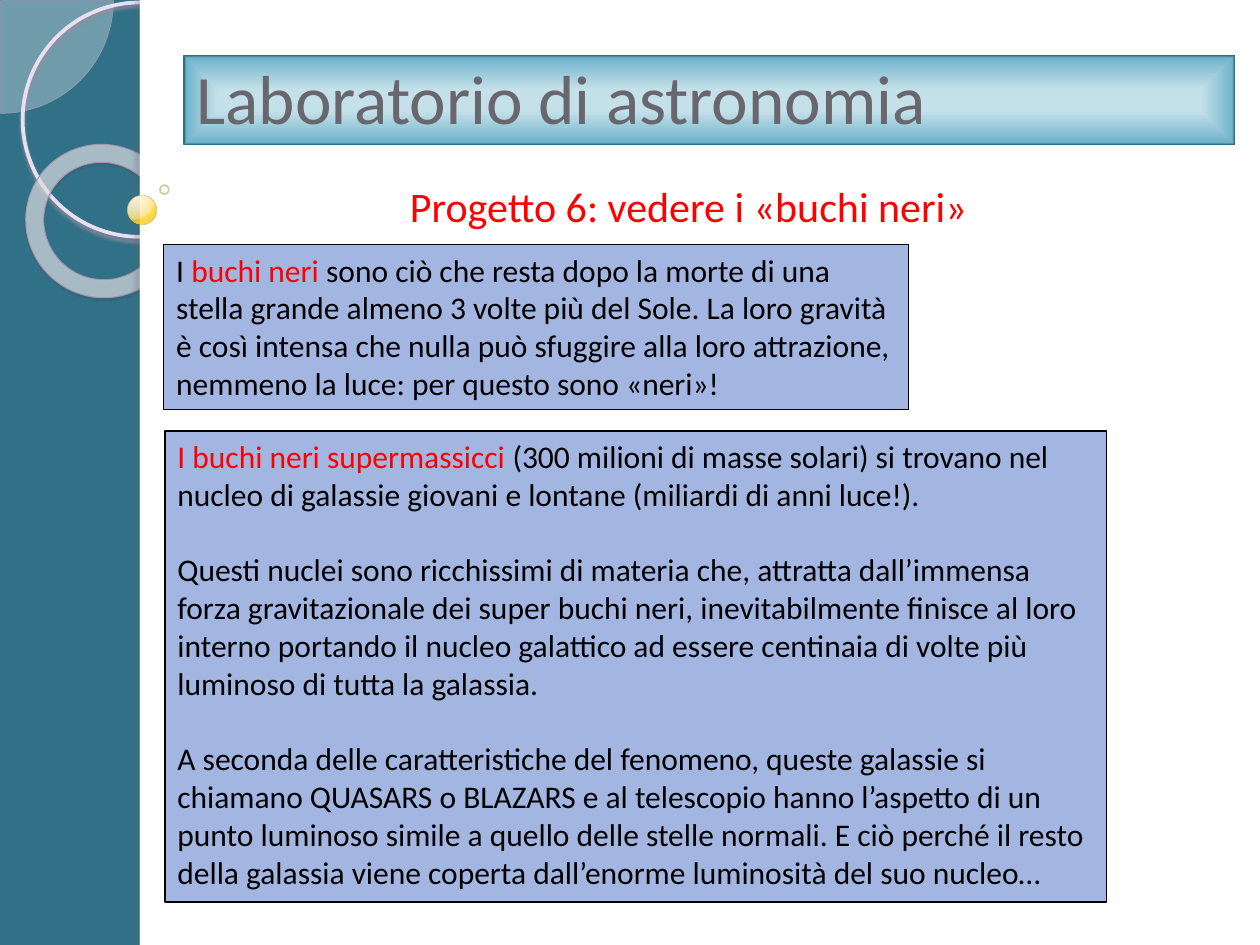
from lxml import etree
from pptx import Presentation
from pptx.dml.color import RGBColor
from pptx.enum.shapes import MSO_SHAPE
from pptx.enum.text import MSO_ANCHOR, MSO_AUTO_SIZE, PP_ALIGN
from pptx.oxml import parse_xml
from pptx.oxml.ns import nsdecls, qn
from pptx.util import Inches, Pt

PIE, OVAL, DONUT, RECT = MSO_SHAPE.PIE, MSO_SHAPE.OVAL, MSO_SHAPE.DONUT, MSO_SHAPE.RECTANGLE
LEFT, CENTER = PP_ALIGN.LEFT, PP_ALIGN.CENTER

THEME = {
    "font": "Calibri", "title_size": Pt(39.6), "subtitle_size": Pt(24), "text_size": Pt(18),
    "title": "69666E", "accent": "FF0000", "text": "000000",
    "backdrop": "317187", "panel": "FFFFFF", "box": "A3B6E2",
    "banner": [(24, "C4E0E9", 100), (94, "72B5CC", 100), (100, "317187", 100)],
    "ball": [(0, "FFF7E2", 95), (50, "FFF0C5", 90), (95, "FFE07C", 88), (100, "FFD327", 85)],
}


def set_gradient(shape, stops, path, focus):
    properties = shape.element.spPr
    for tag in ("a:noFill", "a:solidFill"):
        for old in properties.findall(qn(tag)):
            properties.remove(old)
    marks = "".join(
        f'<a:gs pos="{pos * 1000}"><a:srgbClr val="{color}"><a:alpha val="{alpha * 1000}"/></a:srgbClr></a:gs>'
        for pos, color, alpha in stops)
    left, top, right, bottom = (edge * 1000 for edge in focus)
    gradient = parse_xml(
        f'<a:gradFill {nsdecls("a")} rotWithShape="1"><a:gsLst>{marks}</a:gsLst><a:path path="{path}">'
        f'<a:fillToRect l="{left}" t="{top}" r="{right}" b="{bottom}"/></a:path></a:gradFill>')
    properties.find(qn("a:prstGeom")).addnext(gradient)


def add_ornament(kind, box, fill=None, alpha=100, line=None, shadow=None):
    ornament = slide.shapes.add_shape(kind, *map(Inches, box))
    ornament.shadow.inherit = False
    if fill:
        ornament.fill.solid()
        ornament.fill.fore_color.rgb = RGBColor.from_string(fill)
        color = ornament.element.spPr.find(qn("a:solidFill"))[0]
        etree.SubElement(color, qn("a:alpha"), val=str(alpha * 1000))
    else:
        ornament.fill.background()
    if line:
        ornament.line.color.rgb = RGBColor.from_string(line[0])
        ornament.line.width = Pt(line[1])
    else:
        ornament.line.fill.background()
    if shadow:
        color, opacity, blur, distance, angle = shadow
        ornament.element.spPr.find(qn("a:effectLst")).append(parse_xml(
            f'<a:outerShdw {nsdecls("a")} blurRad="{Pt(blur)}" dist="{Pt(distance)}" dir="{angle * 60000}">'
            f'<a:srgbClr val="{color}"><a:alpha val="{opacity * 1000}"/></a:srgbClr></a:outerShdw>'))
    return ornament


prs = Presentation()
prs.slide_width, prs.slide_height = Inches(10), Inches(7.5)
slide = prs.slides.add_slide(prs.slide_layouts[5])
slide.background.fill.solid()
slide.background.fill.fore_color.rgb = RGBColor.from_string(THEME["backdrop"])

quarter = add_ornament(PIE, (-0.89, -0.89, 1.79, 1.79), "F6F4F9", 33, ("ACA0B9", 0.25))
quarter.adjustments[0], quarter.adjustments[1] = 0, 54
add_ornament(OVAL, (0.18, 0.02, 1.86, 1.86), line=("E8E0F2", 2.15), shadow=("958D9D", 85, 2, 2, 90))
ring = add_ornament(DONUT, (0.2, 1.15, 1.23, 1.21), "F0F0F4", 62, ("A094AF", 0.58),
                    ("4A4550", 35, 1, 1.2, 75))
ring.adjustments[0] = 0.118
ring.rotation = 38.6
add_ornament(RECT, (1.11, 0, 8.89, 7.5), THEME["panel"])
add_ornament(RECT, (1.11, 0, 0.08, 7.5), THEME["panel"], shadow=("646068", 25, 3, 3, 180))
ball = add_ornament(OVAL, (1.01, 1.55, 0.23, 0.23), line=("CAB45C", 0.16))
set_gradient(ball, THEME["ball"], "circle", (25, 12, 75, 88))
add_ornament(OVAL, (1.27, 1.47, 0.07, 0.07), line=("D3C89D", 1))

title = slide.shapes.title
slide.shapes.element.append(title.element)
title.left, title.top, title.width, title.height = map(Inches, (1.46, 0.44, 8.34, 0.71))
title.fill.solid()
title.line.color.rgb = RGBColor.from_string(THEME["backdrop"])
title.line.width = Pt(0.75)
title.text = "Laboratorio di astronomia"
title.text_frame.auto_size = MSO_AUTO_SIZE.NONE
title.text_frame.vertical_anchor = MSO_ANCHOR.BOTTOM
heading = title.text_frame.paragraphs[0]
heading.alignment = LEFT
heading.font.name, heading.font.size = THEME["font"], THEME["title_size"]
heading.font.color.rgb = RGBColor.from_string(THEME["title"])
geometry = parse_xml(f'<a:prstGeom {nsdecls("a")} prst="rect"><a:avLst/></a:prstGeom>')
title.element.spPr.find(qn("a:xfrm")).addnext(geometry)
set_gradient(title, THEME["banner"], "rect", (50, 50, 50, 50))

passages = [
    ((1.85, 1.38, 7.23, 0.5), None, CENTER, "subtitle_size",
     [[("Progetto 6: vedere i «buchi neri»", "accent")]]),
    ((1.3, 1.94, 5.91, 1.31), "box", LEFT, "text_size",
     [[("I ", "text"), ("buchi neri ", "accent"),
       ("sono ciò che resta dopo la morte di una stella grande almeno 3 volte più del Sole. "
        "La loro gravità è così intensa che nulla può sfuggire alla loro attrazione, "
        "nemmeno la luce: per questo sono «neri»!", "text")]]),
    ((1.31, 3.42, 7.47, 3.74), "box", LEFT, "text_size",
     [[("I buchi neri supermassicci ", "accent"),
       ("(300 milioni di masse solari) si trovano nel nucleo di galassie giovani e lontane "
        "(miliardi di anni luce!).", "text")],
      [("Questi nuclei sono ricchissimi di materia che, attratta dall’immensa forza gravitazionale "
        "dei super buchi neri, inevitabilmente finisce al loro interno portando il nucleo galattico "
        "ad essere centinaia di volte più luminoso di tutta la galassia.", "text")],
      [("A seconda delle caratteristiche del fenomeno, queste galassie si chiamano QUASARS o BLAZARS "
        "e al telescopio hanno l’aspetto di un punto luminoso simile a quello delle stelle normali. "
        "E ciò perché il resto della galassia viene coperta dall’enorme luminosità del suo nucleo…",
        "text")]]),
]
for box, fill, alignment, size, paragraphs in passages:
    passage = slide.shapes.add_textbox(*map(Inches, box))
    if fill:
        passage.fill.solid()
        passage.fill.fore_color.rgb = RGBColor.from_string(THEME[fill])
        passage.line.color.rgb = RGBColor.from_string(THEME["text"])
        passage.line.width = Pt(0.75)
    frame = passage.text_frame
    frame.word_wrap = True
    for index, pieces in enumerate(paragraphs):
        paragraph = frame.add_paragraph() if index else frame.paragraphs[0]
        paragraph.alignment = alignment
        if index:
            paragraph.space_before = Pt(21.6)
        paragraph.font.name, paragraph.font.size = THEME["font"], THEME[size]
        for words, color in pieces:
            run = paragraph.add_run()
            run.text = words
            run.font.color.rgb = RGBColor.from_string(THEME[color])

prs.save("out.pptx")
